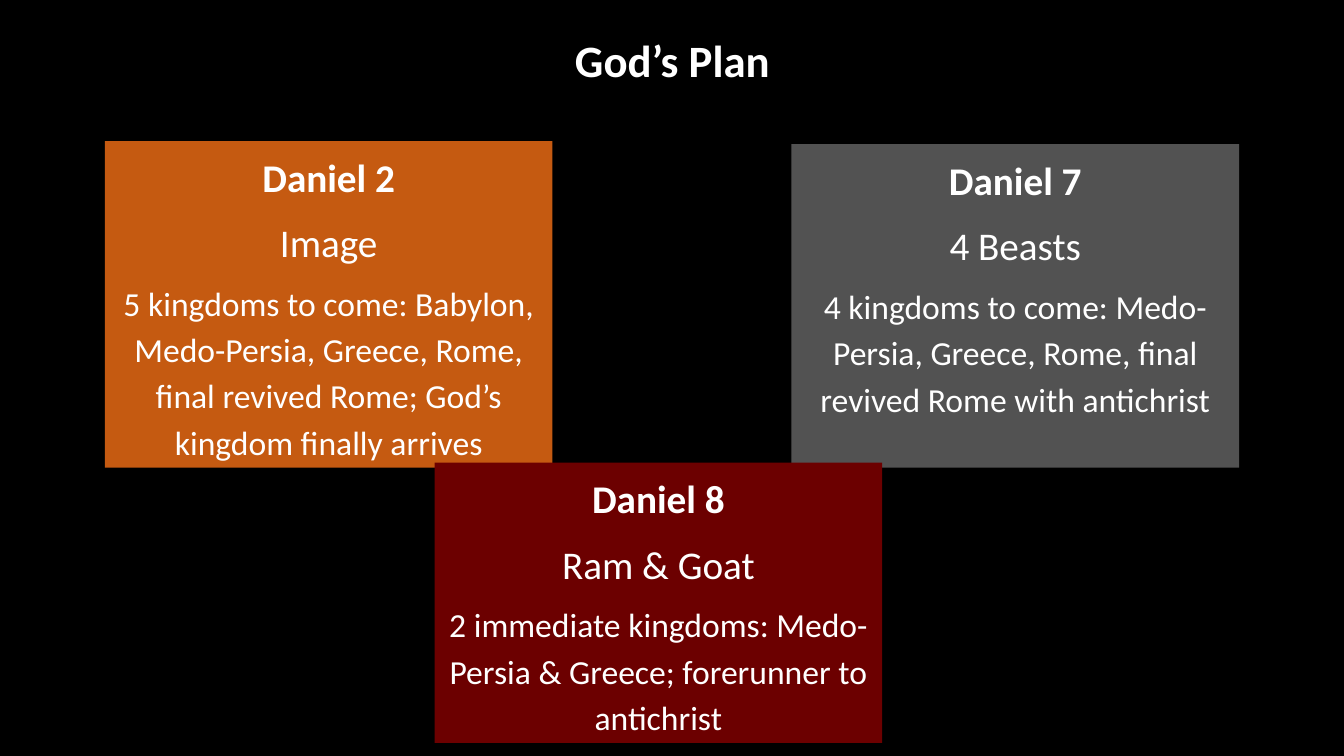
import pptx
import pptx.dml.color
import pptx.enum.shapes
import pptx.enum.text
import pptx.util

Inches = pptx.util.Inches
Pt = pptx.util.Pt

TITLE_ONLY = 5
PANEL_WIDTH = 4.44
VISIONS = [
    (1.04, 1.4, 3.24, "C55A11", "Daniel 2", "Image",
     "5 kingdoms to come: Babylon, Medo-Persia, Greece, Rome, final revived Rome; "
     "God’s kingdom finally arrives"),
    (7.85, 1.43, 3.21, "525252", "Daniel 7", "4 Beasts",
     "4 kingdoms to come: Medo-Persia, Greece, Rome, final revived Rome with antichrist"),
    (4.31, 4.59, 2.78, "6C0000", "Daniel 8", "Ram & Goat",
     "2 immediate kingdoms: Medo-Persia & Greece; forerunner to antichrist"),
]


def colour(value):
    return pptx.dml.color.RGBColor.from_string(value)


def write(para, text, size=24, bold=False, before=0, font="Calibri", fill="FFFFFF"):
    para.alignment = pptx.enum.text.PP_ALIGN.CENTER
    para.line_spacing = 1.15
    para.space_before = Pt(before)
    para.space_after = Pt(8)
    span = para.add_run()
    span.text = text
    span.font.name = font
    span.font.size = Pt(size)
    span.font.bold = bold
    span.font.color.rgb = colour(fill)


class Slide:
    background = "000000"

    def __init__(self, deck):
        self.deck = deck
        self.page = deck.slides.add_slide(deck.slide_layouts[TITLE_ONLY])

    def rectangle(self, left, top, width, height, fill):
        box = self.page.shapes.add_shape(
            pptx.enum.shapes.MSO_SHAPE.RECTANGLE, left, top, width, height)
        box.shadow.inherit = False
        box.fill.solid()
        box.fill.fore_color.rgb = colour(fill)
        box.line.fill.background()
        return box

    def backdrop(self):
        box = self.rectangle(0, 0, self.deck.slide_width, self.deck.slide_height,
                             self.background)
        box.line.color.rgb = colour(self.background)
        box.line.width = Pt(1)

    def text_frame(self, box):
        frame = box.text_frame
        frame.word_wrap = True
        frame.auto_size = pptx.enum.text.MSO_AUTO_SIZE.SHAPE_TO_FIT_TEXT
        frame.vertical_anchor = pptx.enum.text.MSO_ANCHOR.TOP
        return frame

    def panel(self, left, top, height, fill, heading, symbol, meaning):
        box = self.rectangle(Inches(left), Inches(top), Inches(PANEL_WIDTH),
                             Inches(height), fill)
        frame = self.text_frame(box)
        write(frame.paragraphs[0], heading, size=28, bold=True)
        write(frame.add_paragraph(), symbol, size=28)
        write(frame.add_paragraph(), meaning)

    def title(self, text, left, top, width, height):
        box = self.page.shapes.title
        box.left, box.top = Inches(left), Inches(top)
        box.width, box.height = Inches(width), Inches(height)
        write(self.text_frame(box).paragraphs[0], text, size=32, bold=True, before=12)
        box.element.getparent().append(box.element)


def main():
    deck = pptx.Presentation()
    deck.slide_width = Inches(13.33)
    deck.slide_height = Inches(7.5)
    slide = Slide(deck)
    slide.backdrop()
    for vision in VISIONS:
        slide.panel(*vision)
    slide.title("God’s Plan", 4.11, 0.19, 5.12, 0.68)
    deck.save("out.pptx")


if __name__ == "__main__":
    main()
